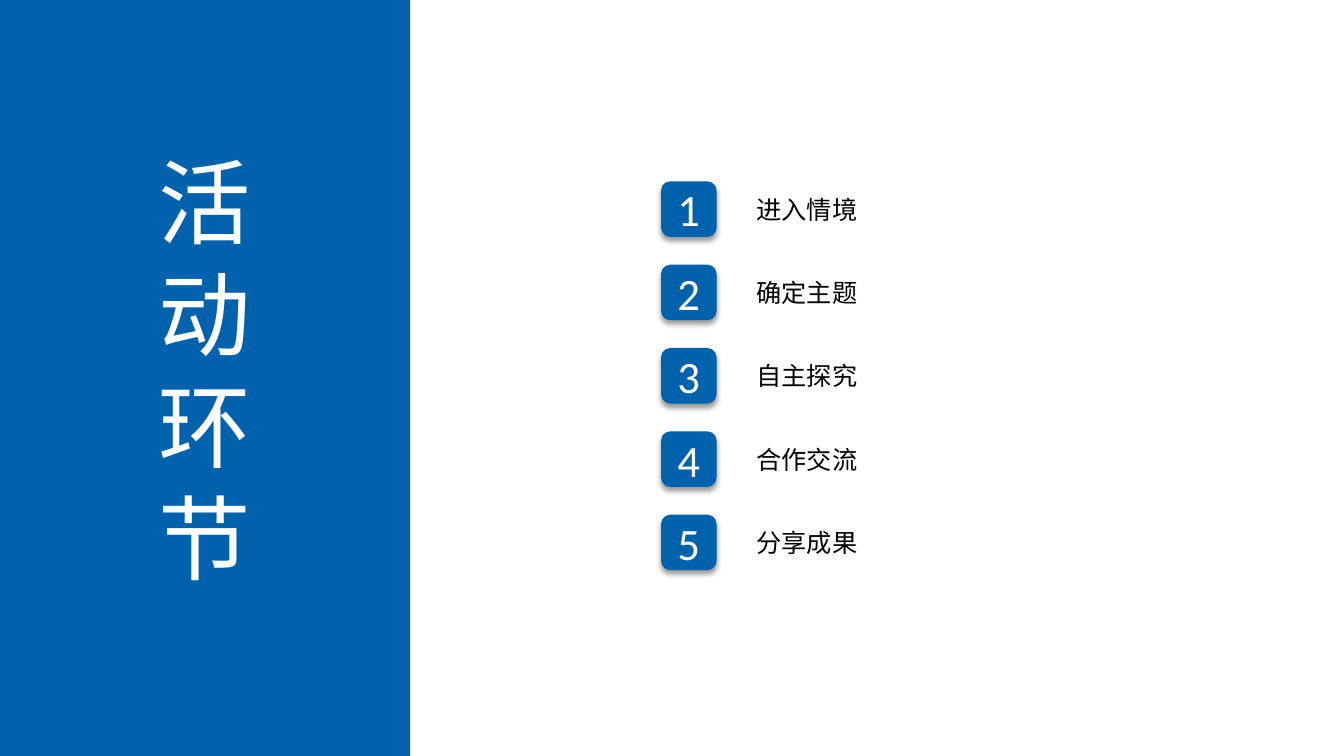
from lxml.etree import SubElement
from pptx import Presentation
from pptx.dml.color import RGBColor
from pptx.enum.shapes import MSO_SHAPE
from pptx.enum.text import MSO_ANCHOR, MSO_AUTO_SIZE, PP_ALIGN
from pptx.oxml import parse_xml
from pptx.oxml.ns import nsdecls, qn
from pptx.util import Cm, Pt

HEADING = "活动环节"
STAGES = ["进入情境", "确定主题", "自主探究", "合作交流", "分享成果"]

BLUE = RGBColor(0x00, 0x62, 0xAC)
WHITE = RGBColor(0xFF, 0xFF, 0xFF)
BLACK = RGBColor(0x00, 0x00, 0x00)
LATIN_FONT = "Calibri"
CHINESE_FONT = "Noto Sans CJK SC"

SLIDE_WIDTH, SLIDE_HEIGHT = Cm(33.87), Cm(19.05)
PANEL_WIDTH = Cm(10.34)
BADGE_LEFT, FIRST_BADGE_TOP, BADGE_SIZE = Cm(16.66), Cm(4.57), Cm(1.4)
STAGE_PITCH = Cm(2.1)
LABEL_LEFT, LABEL_WIDTH, LABEL_HEIGHT = Cm(18.8), Cm(3.07), Cm(1.02)

SHADOW = f"""<a:effectLst {nsdecls("a")}>
  <a:outerShdw blurRad="{Pt(4)}" dist="{Pt(3)}" dir="5400000" rotWithShape="0">
    <a:srgbClr val="000000"><a:alpha val="40000"/></a:srgbClr>
  </a:outerShdw>
</a:effectLst>"""


def write(shape, text, *, size, font, color, wrap=True, line_spacing=None):
    frame = shape.text_frame
    frame.auto_size = MSO_AUTO_SIZE.NONE
    frame.word_wrap = wrap
    frame.vertical_anchor = MSO_ANCHOR.MIDDLE
    paragraph = frame.paragraphs[0]
    paragraph.alignment = PP_ALIGN.CENTER
    paragraph.line_spacing = line_spacing
    run = paragraph.add_run()
    run.text = text
    run.font.size = Pt(size)
    run.font.name = font
    run.font.color.rgb = color
    SubElement(run.font._element, qn("a:ea"), typeface=font)


def add_blue_shape(slide, kind, left, top, width, height):
    shape = slide.shapes.add_shape(kind, left, top, width, height)
    shape.shadow.inherit = False
    shape.fill.solid()
    shape.fill.fore_color.rgb = BLUE
    shape.line.fill.background()
    return shape


def add_stage(slide, index, stage):
    top = FIRST_BADGE_TOP + index * STAGE_PITCH
    badge = add_blue_shape(slide, MSO_SHAPE.ROUNDED_RECTANGLE,
                           BADGE_LEFT, top, BADGE_SIZE, BADGE_SIZE)
    properties = badge._element.spPr
    properties.replace(properties.find(qn("a:effectLst")), parse_xml(SHADOW))
    write(badge, str(index + 1), size=32, font=LATIN_FONT, color=WHITE)

    label_top = top + (BADGE_SIZE - LABEL_HEIGHT) // 2
    label = slide.shapes.add_textbox(LABEL_LEFT, label_top, LABEL_WIDTH, LABEL_HEIGHT)
    write(label, stage, size=18, font=CHINESE_FONT, color=BLACK, wrap=False)


def add_heading(slide):
    add_blue_shape(slide, MSO_SHAPE.RECTANGLE, 0, 0, PANEL_WIDTH, SLIDE_HEIGHT)
    title = slide.shapes.title
    slide.shapes._spTree.append(title._element)  # in front of the panel
    title.left, title.top = Cm(3), Cm(3.5)
    title.width, title.height = Cm(4.34), Cm(11.53)
    write(title, HEADING, size=66, font=CHINESE_FONT, color=WHITE, line_spacing=Pt(80))


def main():
    presentation = Presentation()
    presentation.slide_width, presentation.slide_height = SLIDE_WIDTH, SLIDE_HEIGHT
    slide = presentation.slides.add_slide(presentation.slide_layouts[5])
    for index, stage in enumerate(STAGES):
        add_stage(slide, index, stage)
    add_heading(slide)
    presentation.save("out.pptx")


if __name__ == "__main__":
    main()
